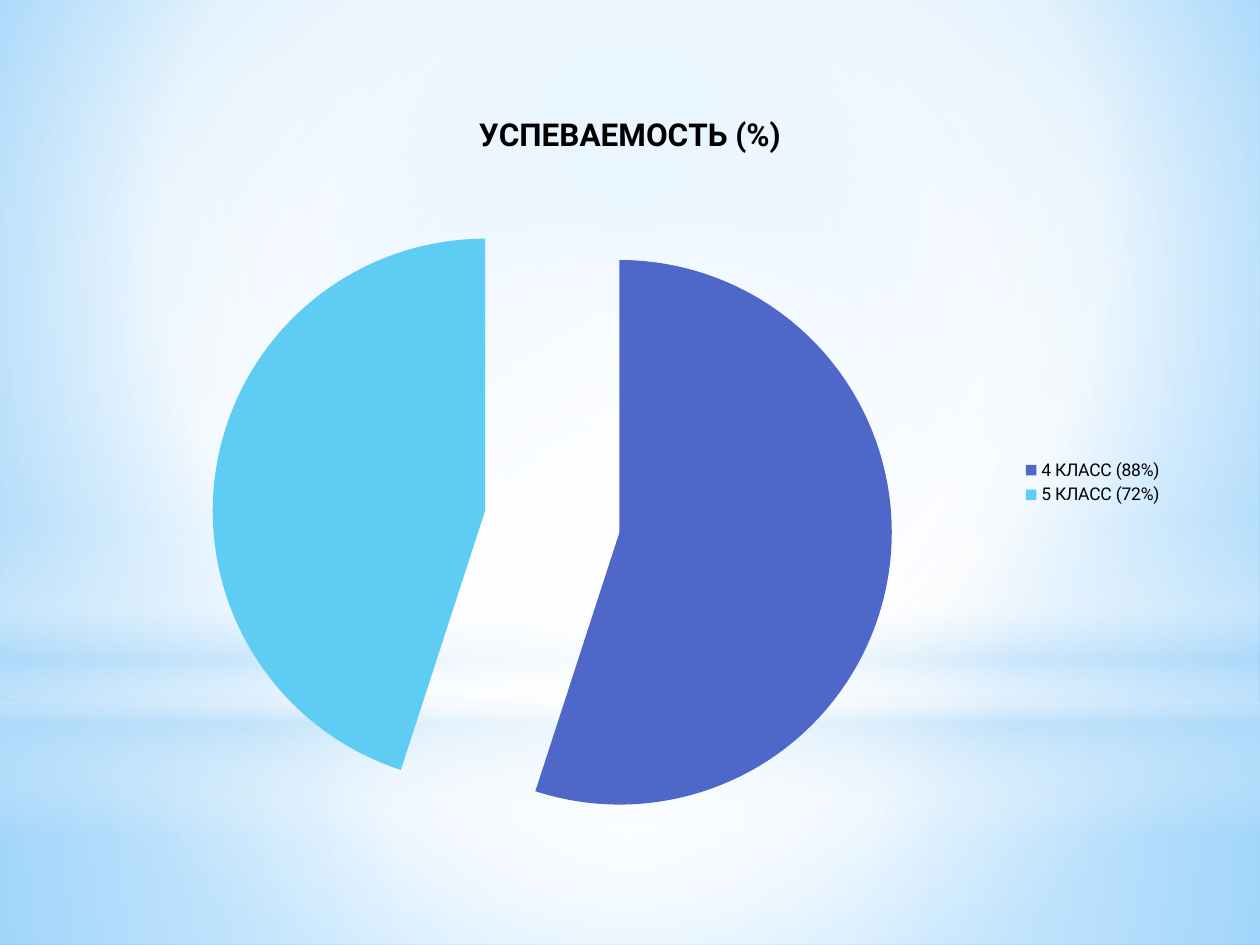
"""Builds the slide with the pie chart of pupils' results."""
from pptx import Presentation
from pptx.chart.data import CategoryChartData
from pptx.dml.color import RGBColor
from pptx.enum.chart import XL_CHART_TYPE, XL_LEGEND_POSITION
from pptx.enum.shapes import MSO_SHAPE
from pptx.oxml import parse_xml
from pptx.oxml.ns import nsdecls, qn
from pptx.util import Emu, Pt

PX = 9144
COLORS = {"text": "000000", "white": "FFFFFF", "haze": "B4DCFA", "sky": "9ED5FF",
          "deep": "5BB9FF", "class4": "4E67C8", "class5": "5ECCF3"}
CENTER = (50, 50, 50, 50)


def put_text(tf, text, size=10, bold=False, color="text", font="Roboto"):
    p = tf.paragraphs[0]
    r = p.add_run()
    r.text = text
    set_font(r.font, size, bold, color, font)


def set_font(f, size=10, bold=False, color="text", font="Roboto"):
    f.size, f.bold, f.name = Pt(size), bold, font
    f.color.rgb = RGBColor.from_string(COLORS[color])


class Deck:
    def __init__(self, width, height):
        self.prs = Presentation()
        self.prs.slide_width, self.prs.slide_height = Emu(width * PX), Emu(height * PX)
        self.s = self.prs.slides.add_slide(self.prs.slide_layouts[6])

    def gradient(self, fill, element, stops, to=None, angle=0):
        fill.gradient()
        gs = "".join(
            f'<a:gs pos="{pos * 1000}"><a:srgbClr val="{COLORS[color]}">'
            f'<a:alpha val="{alpha * 1000}"/></a:srgbClr></a:gs>'
            for pos, color, alpha in stops)
        if to:
            sides = " ".join(f'{side}="{v * 1000}"' for side, v in zip("ltrb", to))
            way = f'<a:path path="circle"><a:fillToRect {sides}/></a:path>'
        else:
            way = f'<a:lin ang="{angle * 60000}" scaled="0"/>'
        old = element.find(".//" + qn("a:gradFill"))
        old.getparent().replace(old, parse_xml(
            f'<a:gradFill {nsdecls("a")} rotWithShape="1"><a:gsLst>{gs}</a:gsLst>{way}</a:gradFill>'))

    def background(self, stops, to):
        fill = self.s.background.fill
        fill.solid()
        self.gradient(fill, self.s.element, stops, to)

    def glow(self, kind, box, stops, to=None, angle=0):
        sp = self.s.shapes.add_shape(kind, *(Emu(v * PX) for v in box))
        sp.shadow.inherit = False
        sp.line.fill.background()
        self.gradient(sp.fill, sp.element, stops, to, angle)

    def pie(self, box, title, slices, explosion):
        data = CategoryChartData()
        data.categories = [name for name, _, _ in slices]
        data.add_series(title, [value for _, value, _ in slices])
        chart = self.s.shapes.add_chart(
            XL_CHART_TYPE.PIE, *(Emu(v * PX) for v in box), data).chart
        set_font(chart.font)
        chart.has_title = True
        put_text(chart.chart_title.text_frame, title, size=18, bold=True)
        chart.chart_title.include_in_layout = False
        chart.has_legend = True
        chart.legend.position = XL_LEGEND_POSITION.RIGHT
        chart.legend.include_in_layout = False
        set_font(chart.legend.font)
        plot = chart.plots[0]
        plot.vary_by_categories = True
        ser = plot.series[0]
        for i, (_, _, color) in enumerate(slices):
            fill = ser.points[i].format.fill
            fill.solid()
            fill.fore_color.rgb = RGBColor.from_string(COLORS[color])
        first = ser._element.find(qn("c:dPt"))
        first.addprevious(parse_xml(f'<c:explosion {nsdecls("c")} val="{explosion}"/>'))


def main():
    deck = Deck(1000, 750)
    deck.background([(0, "sky", 100), (60, "white", 100), (100, "deep", 100)], (20, 10, 20, 60))
    rect, oval = MSO_SHAPE.RECTANGLE, MSO_SHAPE.OVAL
    deck.glow(rect, (0, 558, 1000, 192),
              [(0, "white", 91), (37, "white", 76), (100, "haze", 79)], CENTER)
    deck.glow(rect, (0, 0, 1000, 558),
              [(0, "white", 89), (48, "white", 62), (100, "haze", 79)], CENTER)
    deck.glow(rect, (0, 412, 1000, 250),
              [(0, "white", 0), (29, "white", 30), (45, "haze", 40),
               (55, "white", 26), (65, "haze", 60), (100, "white", 0)], angle=90)
    deck.glow(oval, (0, 175, 1000, 558), [(0, "white", 100), (56, "white", 0)], CENTER)
    deck.pie((67, 68, 866, 630), "УСПЕВАЕМОСТЬ (%)",
             [("4 КЛАСС (88%)", 55, "class4"), ("5 КЛАСС (72%)", 45, "class5")], explosion=25)
    deck.prs.save("out.pptx")


if __name__ == "__main__":
    main()
